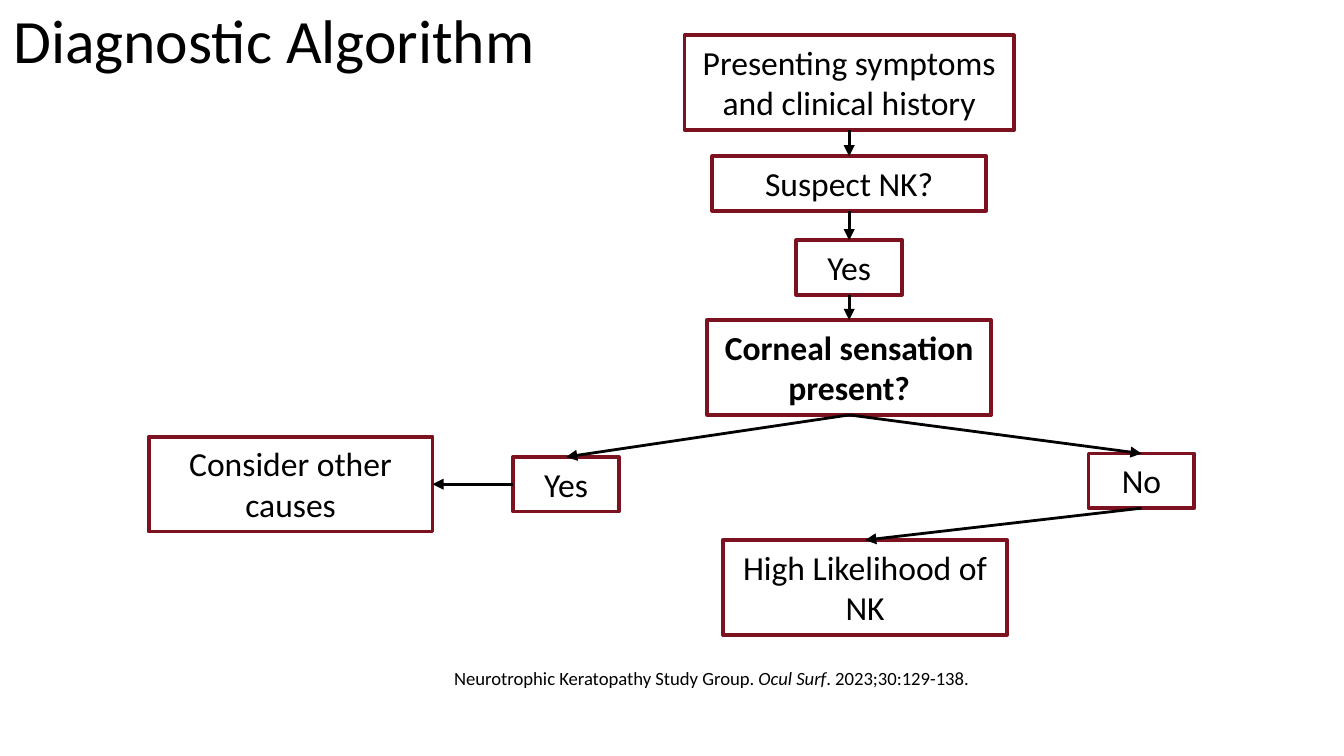
from dataclasses import dataclass

from lxml import etree
from pptx import Presentation
from pptx.dml.color import RGBColor
from pptx.enum import shapes, text
from pptx.oxml import ns
from pptx import util as u

EMU_PER_PX = 5715
TOP, LEFT, BOTTOM, RIGHT = 0, 1, 2, 3
ONE_LINE, TWO_LINES = 65, 113
NARROW, MEDIUM = 126, 338
TRUNK, YES_BRANCH, NO_BRANCH = 1011, 674, 1359


@dataclass(frozen=True)
class Theme:
    """Colours, font and sizes of the slide."""
    font: str = "Calibri"
    ink: RGBColor = RGBColor(0, 0, 0)
    border: RGBColor = RGBColor(0x7C, 0x11, 0x1F)
    title_size: int = 33
    box_size: int = 18
    citation_size: int = 10
    border_width: float = 2
    arrow_width: float = 1.5


THEME = Theme()


def px(value):
    """Turn px into EMU."""
    return u.Emu(value * EMU_PER_PX)


def style_font(font, size, bold=False, italic=False):
    """Apply the theme font to a run."""
    font.name, font.size = THEME.font, u.Pt(size)
    font.bold, font.italic = bold, italic
    font.color.rgb = THEME.ink


def add_text(slide, left, top, width, height, runs, size):
    """Add a text box of (wording, italic) runs and return its frame."""
    shape = slide.shapes.add_textbox(px(left), px(top), px(width), px(height))
    text_frame = shape.text_frame
    text_frame.word_wrap = True
    for wording, italic in runs:
        run = text_frame.paragraphs[0].add_run()
        run.text = wording
        style_font(run.font, size, italic=italic)
    return text_frame


def add_box(slide, label, center, top, width, height, bold=False):
    """Add an outlined flowchart box centred on a column."""
    shape = slide.shapes.add_shape(
        shapes.MSO_SHAPE.RECTANGLE,
        px(center - width // 2), px(top), px(width), px(height))
    shape.shadow.inherit = False
    shape.fill.background()
    shape.line.color.rgb = THEME.border
    shape.line.width = u.Pt(THEME.border_width)
    text_frame = shape.text_frame
    text_frame.word_wrap = True
    text_frame.vertical_anchor = text.MSO_ANCHOR.TOP
    text_frame.text = label
    paragraph = text_frame.paragraphs[0]
    paragraph.alignment = text.PP_ALIGN.CENTER
    style_font(paragraph.runs[0].font, THEME.box_size, bold)
    return shape


def add_arrow(slide, source, target, source_side=BOTTOM, target_side=TOP):
    """Join two boxes with a straight arrow."""
    connector = slide.shapes.add_connector(shapes.MSO_CONNECTOR.STRAIGHT, 0, 0, 0, 0)
    connector.begin_connect(source, source_side)
    connector.end_connect(target, target_side)
    connector.line.color.rgb = THEME.ink
    connector.line.width = u.Pt(THEME.arrow_width)
    properties = connector._element.spPr
    line = properties.find(ns.qn("a:ln"))
    etree.SubElement(line, ns.qn("a:tailEnd"), type="triangle")
    etree.SubElement(properties, ns.qn("a:effectLst"))


def main():
    """Build the diagnostic flowchart."""
    presentation = Presentation()
    presentation.slide_width, presentation.slide_height = px(1600), px(900)
    slide = presentation.slides.add_slide(presentation.slide_layouts[6])

    title = add_text(slide, 0, -35, 1379, 174,
                     [("Diagnostic Algorithm", False)], THEME.title_size)
    title.vertical_anchor = text.MSO_ANCHOR.MIDDLE
    title.paragraphs[0].line_spacing = 0.9

    symptoms = add_box(slide, "Presenting symptoms and clinical history",
                       TRUNK, 42, 392, TWO_LINES)
    suspect = add_box(slide, "Suspect NK?", TRUNK, 186, 326, ONE_LINE)
    suspected = add_box(slide, "Yes", TRUNK, 286, NARROW, ONE_LINE)
    sensation = add_box(slide, "Corneal sensation present?",
                        TRUNK, 381, MEDIUM, TWO_LINES, bold=True)
    present = add_box(slide, "Yes", YES_BRANCH, 544, NARROW, ONE_LINE)
    absent = add_box(slide, "No", NO_BRANCH, 540, NARROW, ONE_LINE)
    other_causes = add_box(slide, "Consider other causes", 346, 520, MEDIUM, TWO_LINES)
    likely = add_box(slide, "High Likelihood of NK", 1030, 643, MEDIUM, TWO_LINES)

    for source, target in [(symptoms, suspect), (suspect, suspected),
                           (suspected, sensation), (sensation, present),
                           (sensation, absent), (absent, likely)]:
        add_arrow(slide, source, target)
    add_arrow(slide, present, other_causes, LEFT, RIGHT)

    add_text(slide, 525, 786, 1034, 43,
             [("Neurotrophic Keratopathy Study Group. ", False),
              ("Ocul Surf", True), (". 2023;30:129-138.", False)],
             THEME.citation_size)
    presentation.save("out.pptx")


if __name__ == "__main__":
    main()
